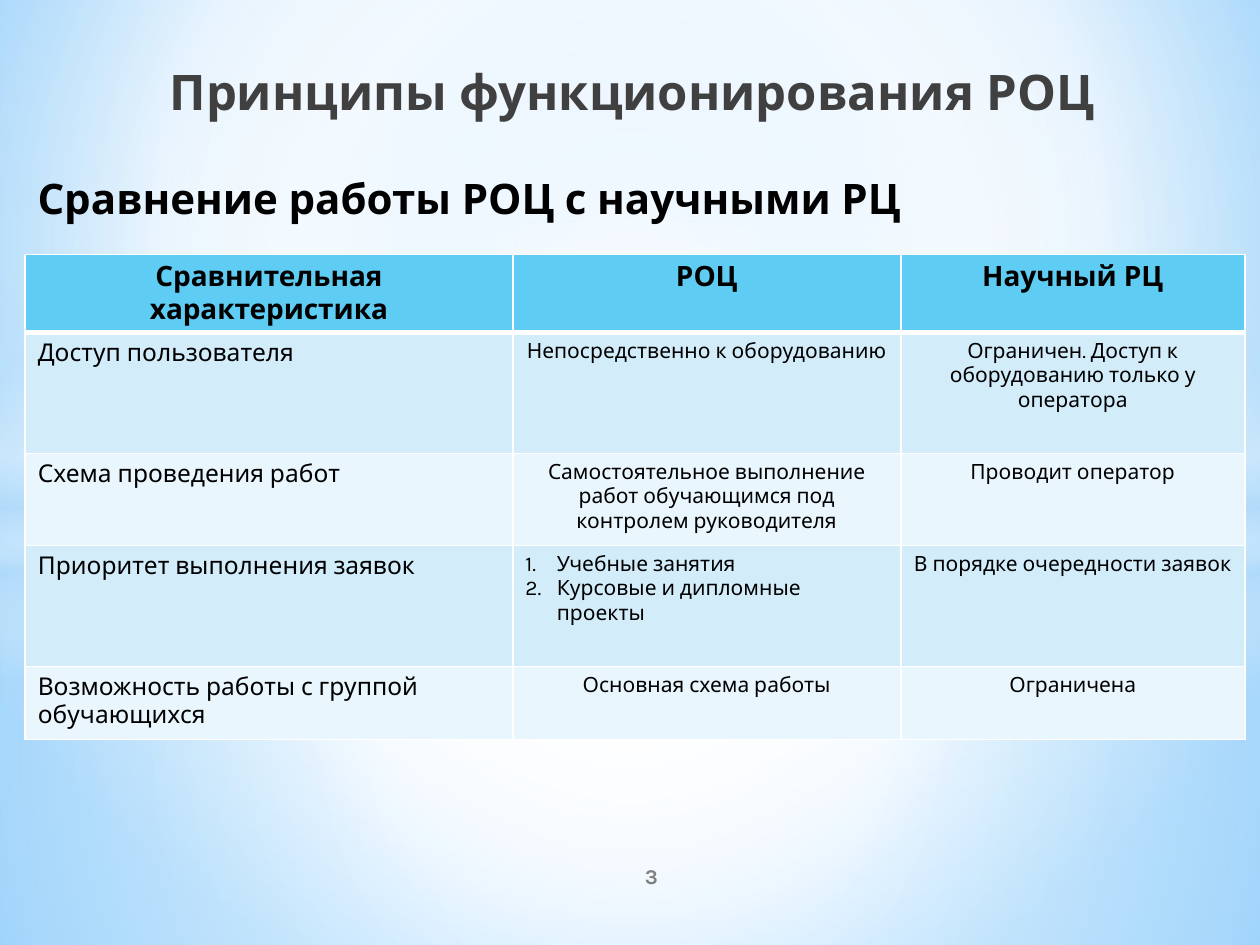
"""Builds a slide comparing a teaching resource centre with research ones."""
import pptx
import pptx.util
import pptx.oxml
import pptx.oxml.ns
import pptx.dml.color
import pptx.enum.shapes
import pptx.enum.text

HUES = {
    "black": "000000", "white": "FFFFFF", "title": "404040", "page": "808080",
    "head": "5ECCF3", "odd": "D2ECFA", "even": "EAF6FD",
    "mist": "B4DCFA", "sky": "9ED5FF", "deep": "5BB9FF",
}
FONT = "Karla"
NS = pptx.oxml.ns.nsdecls("a")
ALIGN = pptx.enum.text.PP_ALIGN
ANCHOR = pptx.enum.text.MSO_ANCHOR
SHAPE = pptx.enum.shapes.MSO_SHAPE


def write(frame, text, size=12, bold=False, hue="black", align=ALIGN.LEFT,
          anchor=ANCHOR.TOP, indent=0, listed=False, gap=0):
    frame.word_wrap = True
    frame.vertical_anchor = anchor
    frame.text = text
    for para in frame.paragraphs:
        para.alignment = align
        para.space_before = para.space_after = pptx.util.Pt(gap)
        props = para._p.get_or_add_pPr()
        props.set("marL", str(pptx.util.Inches(indent)))
        props.set("indent", str(-pptx.util.Inches(indent) if listed else 0))
        mark = '<a:buAutoNum %s type="arabicPeriod"/>' if listed else "<a:buNone %s/>"
        props.append(pptx.oxml.parse_xml(mark % NS))
        for run in para.runs:
            run.font.name = FONT
            run.font.size = pptx.util.Pt(size)
            run.font.bold = bold
            run.font.color.rgb = pptx.dml.color.RGBColor.from_string(HUES[hue])


def blend(owner, stops, focus=None):
    marks = "".join(
        f'<a:gs pos="{pos * 1000}"><a:srgbClr val="{HUES[hue]}">'
        f'<a:alpha val="{alpha * 1000}"/></a:srgbClr></a:gs>'
        for pos, hue, alpha in stops)
    way = '<a:lin ang="5400000" scaled="0"/>'
    if focus:
        sides = " ".join(f'{side}="{val * 1000}"' for side, val in zip("ltrb", focus))
        way = f'<a:path path="circle"><a:fillToRect {sides}/></a:path>'
    fill = pptx.oxml.parse_xml(
        f'<a:gradFill {NS} rotWithShape="1"><a:gsLst>{marks}</a:gsLst>{way}</a:gradFill>')
    owner.replace(owner.find(pptx.oxml.ns.qn("a:gradFill")), fill)


deck = pptx.Presentation()
deck.slide_width = wide = pptx.util.Inches(10)
deck.slide_height = pptx.util.Inches(7.5)
unit = wide / 100
slide = deck.slides.add_slide(deck.slide_layouts[5])
shapes = slide.shapes

slide.background.fill.gradient()
blend(slide._element.xpath(".//p:bgPr")[0],
      [(0, "sky", 100), (60, "white", 100), (100, "deep", 100)], (20, 10, 20, 60))

mid = (50, 50, 50, 50)
glows = [
    (SHAPE.RECTANGLE, 42.3, 32.7, mid,
     [(0, "white", 91), (37, "white", 76), (100, "mist", 79)]),
    (SHAPE.RECTANGLE, 0, 42.3, mid,
     [(0, "white", 89), (48, "white", 62), (100, "mist", 79)]),
    (SHAPE.RECTANGLE, 29, 25, None,
     [(0, "white", 0), (29, "white", 30), (45, "mist", 40),
      (55, "white", 26), (65, "mist", 60), (100, "white", 0)]),
    (SHAPE.OVAL, 17.5, 55.8, mid, [(0, "white", 100), (54, "white", 0)]),
]
for kind, top, tall, focus, stops in glows:
    glow = shapes.add_shape(kind, 0, int(top * unit), wide, int(tall * unit))
    glow.shadow.inherit = False
    glow.line.fill.background()
    glow.fill.gradient()
    blend(glow._element.spPr, stops, focus)

title = shapes.title
title.left, title.top, title.width, title.height = (
    int(n * unit) for n in (9.9, 4.4, 78.5, 7.2))
shapes._spTree.append(title._element)
write(title.text_frame, "Принципы функционирования РОЦ", size=28, bold=True,
      hue="title", align=ALIGN.CENTER, indent=0.2)
title.text_frame.auto_size = pptx.enum.text.MSO_AUTO_SIZE.NONE

rows = [
    ("Сравнительная характеристика", "РОЦ", "Научный РЦ"),
    ("Доступ пользователя", "Непосредственно к оборудованию",
     "Ограничен. Доступ к оборудованию только у оператора"),
    ("Схема проведения работ",
     "Самостоятельное выполнение работ обучающимся под контролем руководителя",
     "Проводит оператор"),
    ("Приоритет выполнения заявок", "Учебные занятия\nКурсовые и дипломные проекты",
     "В порядке очередности заявок"),
    ("Возможность работы с группой обучающихся", "Основная схема работы", "Ограничена"),
]
spans = (38.7, 30.8, 27.3)
talls = (6, 9.6, 7.3, 9.6, 5.8)
table = shapes.add_table(len(rows), len(spans), *(
    int(n * unit) for n in (2, 20.2, sum(spans), sum(talls)))).table
for col, span in zip(table.columns, spans):
    col.width = int(span * unit)
for r, (row, tall) in enumerate(zip(rows, talls)):
    table.rows[r].height = int(tall * unit)
    for c, text in enumerate(row):
        cell = table.cell(r, c)
        listed = "\n" in text
        left = listed or (r > 0 and c == 0)
        write(cell.text_frame, text, size=16 if r == 0 else 14 if c == 0 else 12,
              bold=r == 0, align=ALIGN.LEFT if left else ALIGN.CENTER,
              indent=0.25 if listed else 0, listed=listed)
        cell.fill.solid()
        hue = "head" if r == 0 else "odd" if r % 2 else "even"
        cell.fill.fore_color.rgb = pptx.dml.color.RGBColor.from_string(HUES[hue])
        for i, side in enumerate("LRTB"):
            thick = 3 if (r, side) in ((0, "B"), (1, "T")) else 1
            cell._tc.get_or_add_tcPr().insert(i, pptx.oxml.parse_xml(
                f'<a:ln{side} {NS} w="{pptx.util.Pt(thick)}"><a:solidFill>'
                f'<a:srgbClr val="{HUES["white"]}"/></a:solidFill></a:ln{side}>'))

notes = [
    ((2, 13.2, 96.1, 5), "Сравнение работы РОЦ с научными РЦ",
     dict(size=24, gap=6)),
    ((41.7, 67.5, 20, 4), "3",
     dict(hue="page", align=ALIGN.CENTER, anchor=ANCHOR.MIDDLE)),
]
for place, text, form in notes:
    box = shapes.add_textbox(*(int(n * unit) for n in place))
    write(box.text_frame, text, bold=True, **form)

deck.save("out.pptx")
